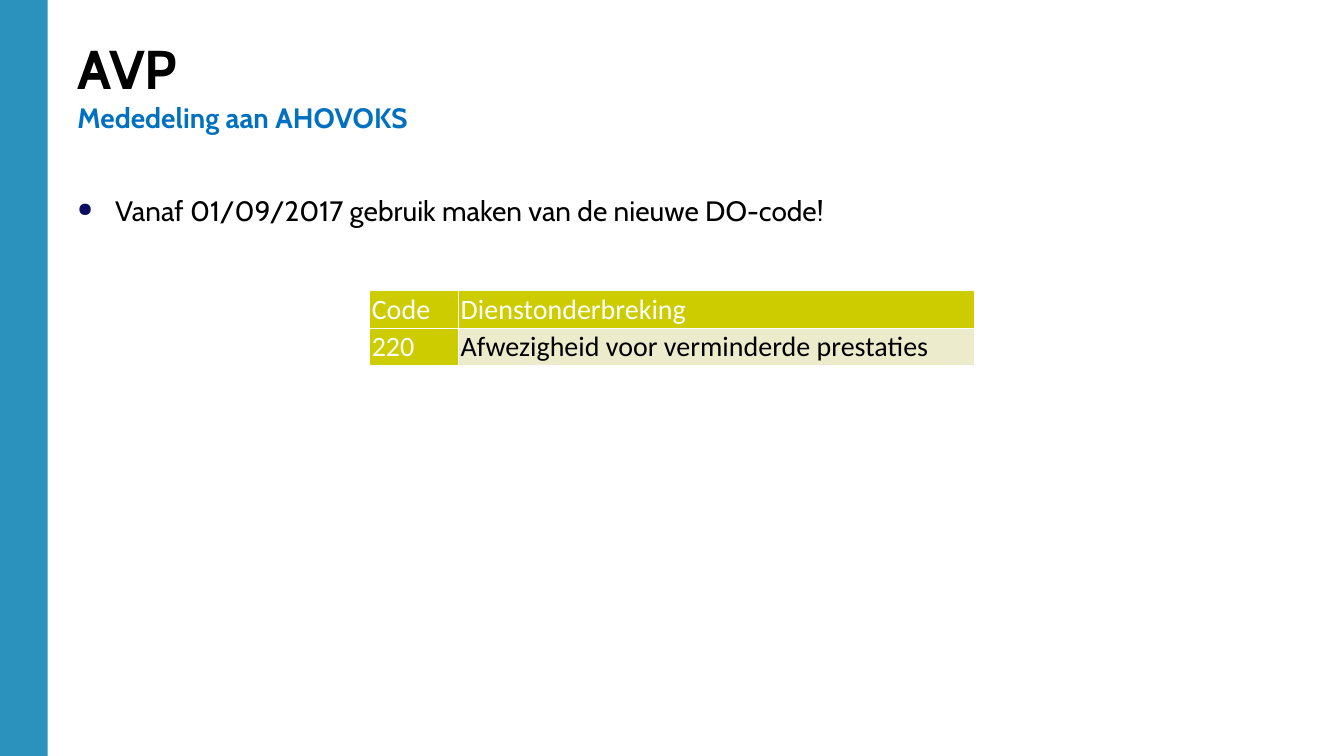
from pptx import Presentation
from pptx.dml.color import RGBColor
from pptx.enum.shapes import MSO_SHAPE as Shape
from pptx.enum.text import MSO_ANCHOR as Anchor
from pptx.util import Cm, Pt
from lxml.etree import SubElement
from pptx.oxml.ns import qn

BLACK = RGBColor(0x00, 0x00, 0x00)
WHITE = RGBColor(0xFF, 0xFF, 0xFF)
TEAL = RGBColor(0x2B, 0x92, 0xBE)
BLUE = RGBColor(0x00, 0x70, 0xC0)
NAVY = RGBColor(0x0C, 0x0C, 0x60)
LIME = RGBColor(0xCC, 0xCC, 0x00)
PALE = RGBColor(0xEC, 0xEC, 0xCC)


def style(para, face, size, color, bold=False):
    font = para.font
    font.name, font.size, font.bold = face, Pt(size), bold
    font.color.rgb = color


deck = Presentation()
deck.slide_width, deck.slide_height = Cm(33.87), Cm(19.05)
slide = deck.slides.add_slide(deck.slide_layouts[6])
shapes = slide.shapes

# Side bar
bar = shapes.add_shape(Shape.RECTANGLE, 0, 0, Cm(1.2), deck.slide_height)
bar.shadow.inherit = False
bar.fill.solid()
bar.fill.fore_color.rgb = TEAL
bar.line.fill.background()

# Title and subtitle
title = shapes.add_textbox(Cm(1.7), Cm(0.33), Cm(31.52), Cm(3.18)).text_frame
title.word_wrap = True
title.vertical_anchor = Anchor.BOTTOM
title.text = "AVP\nMededeling aan AHOVOKS"
head, sub = title.paragraphs
style(head, "Cabin", 39, BLACK, True)
style(sub, "Cabin", 20, BLUE, True)

# Bullet
body = shapes.add_textbox(Cm(1.7), Cm(4.84), Cm(30.48), Cm(12.3)).text_frame
body.word_wrap = True
body.text = "Vanaf 01/09/2017 gebruik maken van de nieuwe DO-code!"
item = body.paragraphs[0]
item.line_spacing = 0.9
style(item, "Cabin", 20, BLACK)
props = item._p.get_or_add_pPr()
props.set("marL", str(Cm(0.95)))
props.set("indent", str(-Cm(0.95)))
tint = SubElement(props, qn("a:buClr"))
SubElement(tint, qn("a:srgbClr"), val=str(NAVY))
SubElement(props, qn("a:buSzPct"), val="70000")
SubElement(props, qn("a:buChar"), char="●")
props.append(props.find(qn("a:defRPr")))  # schema order: after the bullet

# Code table
rows = [
    ("Code", "Dienstonderbreking"),
    ("220", "Afwezigheid voor verminderde prestaties"),
]
table = shapes.add_table(2, 2, Cm(9.32), Cm(7.32), Cm(15.24), Cm(1.88)).table
table.columns[0].width, table.columns[1].width = Cm(2.24), Cm(13)
for r, row in enumerate(rows):
    for c, text in enumerate(row):
        cell = table.cell(r, c)
        cell.text = text
        cell.margin_left = cell.margin_right = Cm(0.05)
        cell.margin_top = cell.margin_bottom = Cm(0.05)
        cell.vertical_anchor = Anchor.TOP if r else Anchor.MIDDLE
        plain = r == 1 and c == 1
        para = cell.text_frame.paragraphs[0]
        para.space_after = Pt(7.5)
        style(para, "Calibri", 20, BLACK if plain else WHITE)

        # White cell borders, placed before the fill
        props = cell._tc.get_or_add_tcPr()
        for side in ("lnL", "lnR", "lnT", "lnB"):
            edge = SubElement(props, qn(f"a:{side}"), w=str(Pt(1)))
            fill = SubElement(edge, qn("a:solidFill"))
            SubElement(fill, qn("a:srgbClr"), val=str(WHITE))
        cell.fill.solid()
        cell.fill.fore_color.rgb = PALE if plain else LIME
        props.append(props.find(qn("a:solidFill")))

deck.save("out.pptx")
